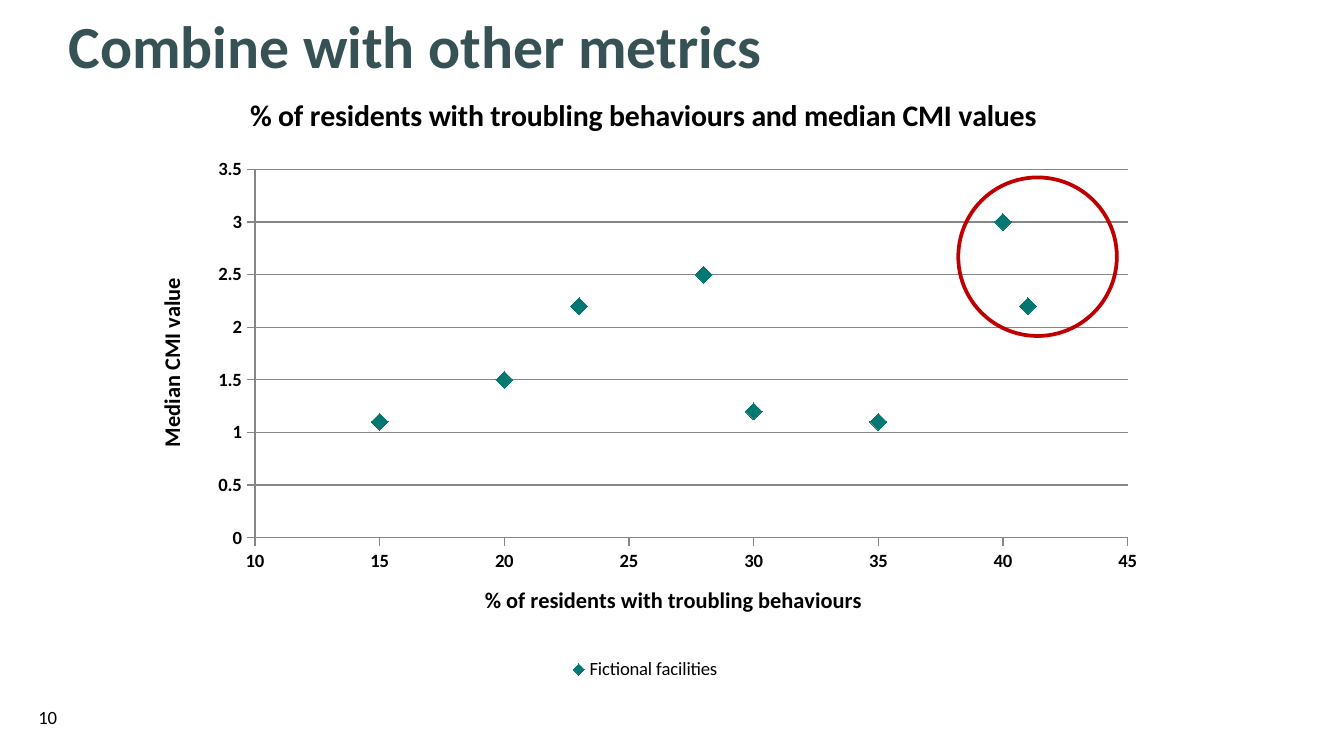
from dataclasses import dataclass

from lxml.etree import SubElement
from pptx import Presentation
from pptx.chart.data import XyChartData
from pptx.dml.color import RGBColor
from pptx.enum.chart import XL_CHART_TYPE as ChartType
from pptx.enum.chart import XL_LEGEND_POSITION as LegendPosition
from pptx.enum.chart import XL_MARKER_STYLE as MarkerStyle
from pptx.enum.chart import XL_TICK_MARK as TickMark
from pptx.enum.shapes import MSO_SHAPE as Shape
from pptx.enum.text import MSO_ANCHOR as Anchor
from pptx.enum.text import PP_ALIGN as Align
from pptx.oxml.ns import qn
from pptx.oxml.xmlchemy import OxmlElement
from pptx.util import Inches, Pt

BLACK = RGBColor(0x00, 0x00, 0x00)
SLATE = RGBColor(0x36, 0x52, 0x54)
TEAL = RGBColor(0x03, 0x78, 0x72)
RED = RGBColor(0xC0, 0x00, 0x00)
GREY = RGBColor(0x86, 0x86, 0x86)
FONT = "Calibri"
PAGE_WIDTH = Inches(10)
PAGE_HEIGHT = PAGE_WIDTH * 9 // 16

FACILITIES = [(20, 1.5), (30, 1.2), (15, 1.1), (35, 1.1),
              (41, 2.2), (23, 2.2), (40, 3), (28, 2.5)]


@dataclass(frozen=True)
class Label:
    text: str
    left: float
    top: float
    width: float
    height: float
    size: int
    color: RGBColor
    bold: bool
    paragraph: dict
    anchor: Anchor


@dataclass(frozen=True)
class AxisStyle:
    title: str
    title_place: dict
    scale: dict
    gridlines: bool


LABELS = [
    Label("10", 0.04, 5.25, 0.63, 0.17, 10, BLACK, False,
          {"alignment": Align.CENTER}, Anchor.MIDDLE),
    Label("Combine with other metrics", 0.51, 0.14, 9, 0.47, 32, SLATE, True,
          {"line_spacing": Pt(33)}, Anchor.TOP),
]
X_AXIS = AxisStyle(
    "% of residents with troubling behaviours", {"x": 0.34, "y": 0.83},
    {"minimum_scale": 10, "maximum_scale": 45, "major_unit": 5}, False)
Y_AXIS = AxisStyle(
    "Median CMI value", {"x": 0.02, "y": 0.33},
    {"minimum_scale": 0, "maximum_scale": 3.5, "major_unit": 0.5}, True)


def set_all(target, values: dict) -> None:
    for name, value in values.items():
        setattr(target, name, value)


def set_font(font, size: int, bold: bool, color: RGBColor = BLACK) -> None:
    set_all(font, {"name": FONT, "size": Pt(size), "bold": bold})
    font.color.rgb = color


def place(element, fractions: dict, inner: bool = False) -> None:
    """Fix the place of a chart part, in fractions of the chart area."""
    layout = element.find(qn("c:layout"))
    if layout is None:
        layout = OxmlElement("c:layout")
        text = element.find(qn("c:tx"))
        element.insert(0 if text is None else element.index(text) + 1, layout)
    manual = SubElement(layout, qn("c:manualLayout"))
    settings = {"layoutTarget": "inner"} if inner else {}
    settings |= {"xMode": "edge", "yMode": "edge"} | fractions
    for name, value in settings.items():
        SubElement(manual, qn(f"c:{name}")).set("val", str(value))


def write_title(title, text: str, size: int, fractions: dict) -> None:
    para = title.text_frame.paragraphs[0]
    span = para.add_run()
    span.text = text
    set_font(span.font, size, True)
    place(title._element, fractions)


def style_axis(axis, style: AxisStyle) -> None:
    set_all(axis, style.scale | {
        "has_major_gridlines": style.gridlines,
        "major_tick_mark": TickMark.OUTSIDE,
        "minor_tick_mark": TickMark.NONE,
    })
    lines = [axis.format.line]
    if style.gridlines:
        lines.append(axis.major_gridlines.format.line)
    for line in lines:
        line.color.rgb = GREY
        line.width = Pt(0.75)
    set_font(axis.tick_labels.font, 10, True)
    write_title(axis.axis_title, style.title, 12, style.title_place)


def add_scatter(page) -> None:
    data = XyChartData()
    facilities = data.add_series("Fictional facilities")
    for share, index in FACILITIES:
        facilities.add_data_point(share, index)
    chart = page.shapes.add_chart(
        ChartType.XY_SCATTER, Inches(0.98), Inches(0.53),
        Inches(7.64), Inches(4.57), data).chart
    set_font(chart.font, 10, False)
    write_title(chart.chart_title,
                "% of residents with troubling behaviours and median CMI values",
                16, {"x": 0.11, "y": 0.03})
    style_axis(chart.category_axis, X_AXIS)
    style_axis(chart.value_axis, Y_AXIS)
    place(chart._chartSpace.chart.plotArea,
          {"x": 0.12, "y": 0.16, "w": 0.85, "h": 0.6}, inner=True)

    chart.has_legend = True
    set_all(chart.legend, {"position": LegendPosition.BOTTOM,
                           "include_in_layout": False})
    set_font(chart.legend.font, 10, False)

    chart.plots[0].vary_by_categories = False
    series = chart.plots[0].series[0]
    series.format.line.fill.background()
    marker = series.marker
    set_all(marker, {"style": MarkerStyle.DIAMOND, "size": 9})
    marker.format.fill.solid()
    marker.format.fill.fore_color.rgb = TEAL
    marker.format.line.color.rgb = TEAL


def add_label(page, label: Label) -> None:
    box = page.shapes.add_textbox(Inches(label.left), Inches(label.top),
                                  Inches(label.width), Inches(label.height))
    frame = box.text_frame
    set_all(frame, {"word_wrap": True, "vertical_anchor": label.anchor,
                    "margin_left": 0, "margin_right": 0,
                    "margin_top": 0, "margin_bottom": 0})
    para = frame.paragraphs[0]
    set_all(para, label.paragraph)
    span = para.add_run()
    span.text = label.text
    set_font(span.font, label.size, label.bold, label.color)


def add_highlight_ring(page) -> None:
    ring = page.shapes.add_shape(Shape.OVAL, Inches(7.13), Inches(1.32),
                                 Inches(1.18), Inches(1.18))
    ring.shadow.inherit = False
    ring.fill.background()
    ring.line.color.rgb = RED
    ring.line.width = Pt(2)


def main() -> None:
    deck = Presentation()
    set_all(deck, {"slide_width": PAGE_WIDTH, "slide_height": PAGE_HEIGHT})
    page = deck.slides.add_slide(deck.slide_layouts[6])
    add_scatter(page)
    for label in LABELS:
        add_label(page, label)
    add_highlight_ring(page)
    deck.save("out.pptx")


if __name__ == "__main__":
    main()
